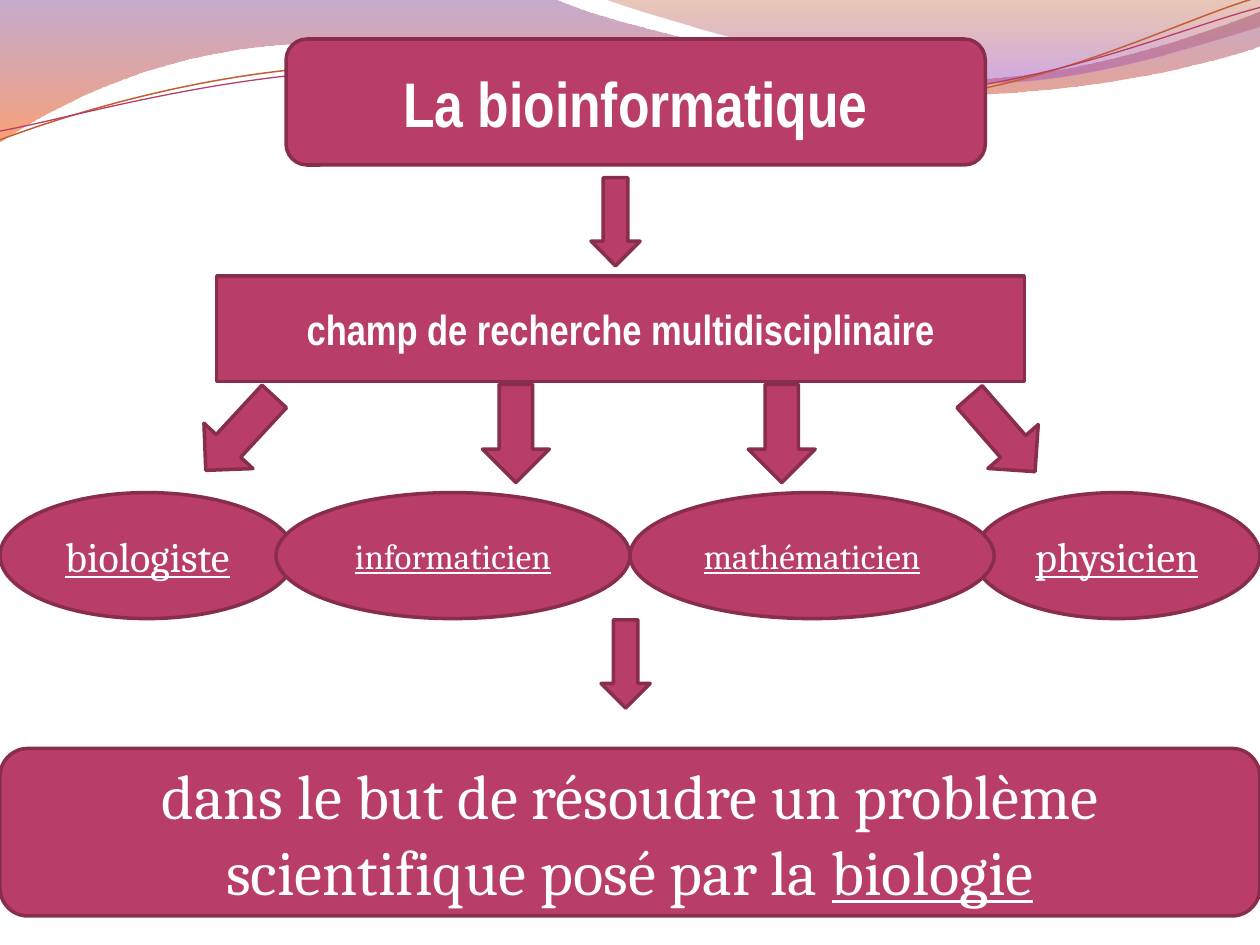
from dataclasses import dataclass
from math import cos, radians, sin
from typing import Optional

from lxml.etree import SubElement
from pptx import Presentation
from pptx.dml.color import RGBColor
from pptx.enum.shapes import MSO_SHAPE
from pptx.enum.text import MSO_ANCHOR, PP_ALIGN
from pptx.oxml.ns import qn
from pptx.util import Inches, Pt


@dataclass(frozen=True)
class Theme:
    fill: str = "B83D68"
    outline: str = "882D4D"
    text: str = "FFFFFF"
    orange: str = "C45F30"
    outline_width: float = 2
    heading_font: str = "Arial Narrow"
    body_font: str = "Cambria"
    large: int = 36
    medium: int = 24
    small: int = 20


@dataclass(frozen=True)
class Stop:
    color: str
    opacity: int
    position: float


@dataclass(frozen=True)
class Wave:
    start: tuple
    steps: list
    stops: tuple


@dataclass(frozen=True)
class Strand:
    start: tuple
    steps: list
    center: tuple
    color: str
    width: float
    rotation: float = 357.3


@dataclass(frozen=True)
class Box:
    kind: MSO_SHAPE
    left: float
    top: float
    width: float
    height: float
    text: str
    size: int
    font: str
    bold: Optional[bool] = None
    underline: Optional[bool] = None
    underlined_end: str = ""


@dataclass(frozen=True)
class Arrow:
    left: float
    top: float
    width: float
    height: float
    rotation: float = 0


THEME = Theme()

WAVES = [
    Wave((0, 0), [
        (4.4, -0.01),
        (4.76, 0.17, 6.64, 0.63, 7.58, 0.63),
        (8.53, 0.63, 9.58, 0.26, 10, 0.09),
        (10.01, 0.36),
        (9.83, 0.44, 8.7, 0.76, 7.46, 0.75),
        (6.22, 0.75, 3.82, 0.28, 2.57, 0.34),
        (1.29, 0.36, 0.46, 0.83, -0.01, 1.13),
        (0, 0),
    ], (Stop("834591", 45, 0), Stop("F35307", 55, 1))),
    Wave((4.79, -0.01), [
        (5.09, 0.11, 6.82, 0.62, 7.69, 0.65),
        (8.56, 0.69, 9.61, 0.32, 10, 0.21),
        (10, 0),
        (4.79, -0.01),
    ], (Stop("B74915", 30, 0), Stop("A14BB4", 45, 0.8))),
]
STRANDS = [
    Strand((0, 1.11), [
        (0.48, 0.93, 1.58, 0.57, 2.77, 0.52),
        (3.95, 0.47, 5.93, 0.89, 7.13, 0.8),
        (8.33, 0.71, 9.38, 0.15, 9.98, -0.02),
    ], (4.99, 0.57), THEME.orange, 0.85),
    Strand((0, 1.04), [
        (0.47, 0.96, 1.64, 0.61, 2.83, 0.56),
        (4.03, 0.51, 5.97, 0.84, 7.17, 0.75),
        (8.36, 0.67, 9.41, 0.21, 10, 0.06),
    ], (5, 0.59), THEME.fill, 0.75),
]

TITLE = Box(MSO_SHAPE.ROUNDED_RECTANGLE, 2.27, 0.31, 5.55, 1, " La bioinformatique ",
            THEME.large, THEME.heading_font, bold=True)
FIELD = Box(MSO_SHAPE.RECTANGLE, 1.72, 2.19, 6.41, 0.84,
            "champ de recherche multidisciplinaire",
            THEME.medium, THEME.heading_font, bold=True)
EXPERTS = [
    Box(MSO_SHAPE.OVAL, left, 3.91, width, 1, text, size, THEME.body_font, underline=True)
    for left, width, text, size in [
        (0, 2.34, "biologiste", THEME.medium),
        (7.73, 2.27, "physicien", THEME.medium),
        (2.19, 2.81, "informaticien", THEME.small),
        (5, 2.89, "mathématicien", THEME.small),
    ]
]
GOAL = Box(MSO_SHAPE.ROUNDED_RECTANGLE, 0, 5.94, 10, 1.33,
           "dans le but de résoudre un problème scientifique posé par la ",
           THEME.large, THEME.body_font, underlined_end="biologie")

FIELD_ARROWS = [
    Arrow(1.64, 3.04, 0.53, 0.8, 42.8),
    Arrow(5.94, 3.05, 0.53, 0.78),
    Arrow(4.69, 1.41, 0.39, 0.7),
]
EXPERT_ARROWS = [
    Arrow(7.69, 3.05, 0.53, 0.79, 318.9),
    Arrow(3.83, 3.05, 0.53, 0.78),
]
GOAL_ARROW = Arrow(4.77, 4.92, 0.39, 0.7)


def rgb(color: str) -> RGBColor:
    return RGBColor.from_string(color)


def turn(point: tuple, center: tuple, degrees: float) -> tuple:
    angle = radians(degrees)
    x, y = point[0] - center[0], point[1] - center[1]
    return (center[0] + x * cos(angle) - y * sin(angle),
            center[1] + x * sin(angle) + y * cos(angle))


def draw_outline(parent, start: tuple, steps: list, *, close: bool,
                 center: tuple = (0, 0), rotation: float = 0):
    points = [start] + [pair for step in steps for pair in zip(step[::2], step[1::2])]
    first, *rest = [tuple(map(Inches, turn(point, center, -rotation))) for point in points]
    builder = parent.shapes.build_freeform(*first)
    builder.add_line_segments(rest, close=close)
    shape = builder.convert_to_shape()
    shape.rotation = rotation
    shape.shadow.inherit = False
    segments = iter(list(shape.element.iter(qn("a:lnTo"))))
    for step in steps:
        segment = next(segments)
        if len(step) == 6:
            curve = segment.getparent().makeelement(qn("a:cubicBezTo"))
            segment.addprevious(curve)
            for part in (segment, next(segments), next(segments)):
                curve.append(part[0])
                part.getparent().remove(part)
    return shape


def draw_wave(page, wave: Wave) -> None:
    shape = draw_outline(page, wave.start, wave.steps, close=True)
    shape.line.fill.background()
    shape.fill.gradient()
    shape.fill.gradient_angle = 270
    for target, stop in zip(shape.fill.gradient_stops, wave.stops):
        target.color.rgb = rgb(stop.color)
        target.position = stop.position
    for color, stop in zip(shape.element.spPr.iter(qn("a:srgbClr")), wave.stops):
        SubElement(color, qn("a:alpha"), val=str(stop.opacity * 1000))


def draw_strand(group, strand: Strand) -> None:
    shape = draw_outline(group, strand.start, strand.steps, close=False,
                         center=strand.center, rotation=strand.rotation)
    shape.fill.background()
    shape.line.color.rgb = rgb(strand.color)
    shape.line.width = Pt(strand.width)


def add_span(para, text: str, *, size: int, font: str, bold: Optional[bool] = None,
             underline: Optional[bool] = None) -> None:
    span = para.add_run()
    span.text = text
    span.font.size = Pt(size)
    span.font.name = font
    span.font.bold = bold
    span.font.underline = underline
    span.font.color.rgb = rgb(THEME.text)


def draw_shape(page, kind: MSO_SHAPE, place):
    shape = page.shapes.add_shape(kind, Inches(place.left), Inches(place.top),
                                  Inches(place.width), Inches(place.height))
    shape.shadow.inherit = False
    shape.fill.solid()
    shape.fill.fore_color.rgb = rgb(THEME.fill)
    shape.line.color.rgb = rgb(THEME.outline)
    shape.line.width = Pt(THEME.outline_width)
    return shape


def draw_box(page, box: Box) -> None:
    frame = draw_shape(page, box.kind, box).text_frame
    frame.word_wrap = True
    frame.vertical_anchor = MSO_ANCHOR.MIDDLE
    para = frame.paragraphs[0]
    para.alignment = PP_ALIGN.CENTER
    add_span(para, box.text, size=box.size, font=box.font, bold=box.bold,
             underline=box.underline)
    if box.underlined_end:
        add_span(para, box.underlined_end, size=box.size, font=box.font, underline=True)


def draw_arrow(page, arrow: Arrow) -> None:
    draw_shape(page, MSO_SHAPE.DOWN_ARROW, arrow).rotation = arrow.rotation


def main() -> None:
    deck = Presentation()
    deck.slide_width, deck.slide_height = Inches(10), Inches(7.5)
    page = deck.slides.add_slide(deck.slide_layouts[6])
    for wave in WAVES:
        draw_wave(page, wave)
    strands = page.shapes.add_group_shape()
    for strand in STRANDS:
        draw_strand(strands, strand)
    for item in [TITLE, *FIELD_ARROWS, FIELD, *EXPERT_ARROWS, *EXPERTS, GOAL, GOAL_ARROW]:
        draw = draw_box if isinstance(item, Box) else draw_arrow
        draw(page, item)
    deck.save("out.pptx")


if __name__ == "__main__":
    main()
